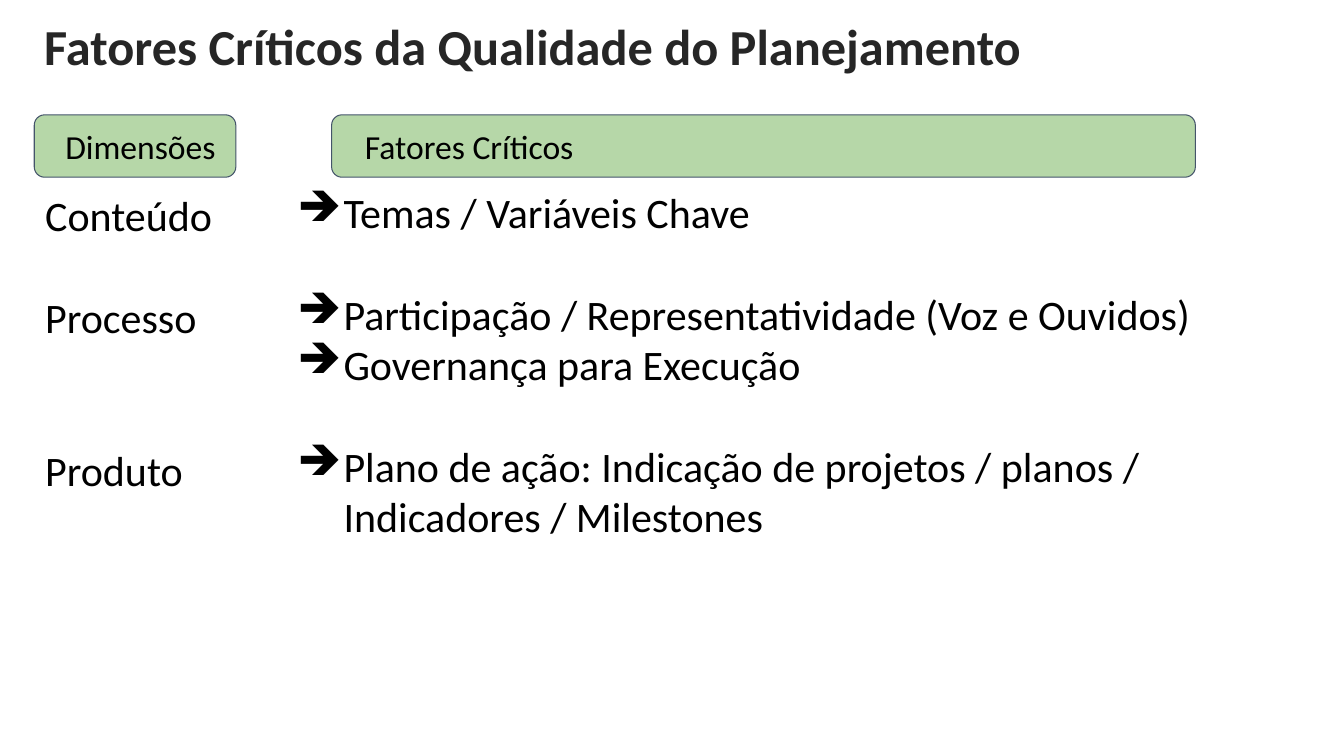
from lxml import etree
from pptx import Presentation
from pptx.dml.color import RGBColor
from pptx.enum import shapes, text
from pptx.oxml import ns
from pptx.util import Pt

COLOURS = {"title": "262626", "text": "000000", "header": "B6D7A8", "outline": "44546A"}
FONT = "Calibri"
BODY_SIZE = 30
BODY_LINE = 36.6  # height of one line of body text

# Each entry: wording, empty lines above it
DIMENSIONS = [("Conteúdo", 0), ("Processo", 1), ("Produto", 2)]
FACTORS = [
    ("Temas / Variáveis Chave", 0),
    ("Participação / Representatividade (Voz e Ouvidos)", 1),
    ("Governança para Execução", 0),
    ("Plano de ação: Indicação de projetos / planos / Indicadores / Milestones", 1),
]


def colour(name):
    return RGBColor.from_string(COLOURS[name])


def style(para, size, colour_name="text", bold=False):
    para.font.name = FONT
    para.font.size = Pt(size)
    para.font.bold = bold
    para.font.color.rgb = colour(colour_name)


def add_arrow_bullet(para):
    props = para._p.get_or_add_pPr()
    props.set("marL", str(Pt(36)))
    props.set("indent", str(-Pt(33)))
    bullet_colour = etree.SubElement(props, ns.qn("a:buClr"))
    etree.SubElement(bullet_colour, ns.qn("a:srgbClr"), val=COLOURS["text"])
    etree.SubElement(props, ns.qn("a:buChar"), char="➔")


def add_text_box(page, left, top, width, height, inset):
    box = page.shapes.add_textbox(Pt(left), Pt(top), Pt(width), Pt(height))
    frame = box.text_frame
    frame.word_wrap = True
    frame.margin_top = frame.margin_bottom = Pt(inset)
    return frame


def add_title(page, wording):
    frame = add_text_box(page, 24.5, 5.8, 812.9, 52.6, 3.6)
    frame.vertical_anchor = text.MSO_ANCHOR.BOTTOM
    para = frame.paragraphs[0]
    para.text = wording
    para.line_spacing = 0.9
    style(para, 36, "title", bold=True)


def add_header(page, wording, left, width, inset):
    box = page.shapes.add_shape(
        shapes.MSO_SHAPE.ROUNDED_RECTANGLE, Pt(left), Pt(82), Pt(width), Pt(44.6))
    box.shadow.inherit = False
    box.fill.solid()
    box.fill.fore_color.rgb = colour("header")
    box.line.color.rgb = colour("outline")
    box.line.width = Pt(0.75)
    frame = box.text_frame
    frame.margin_left = Pt(inset)
    frame.vertical_anchor = text.MSO_ANCHOR.MIDDLE
    para = frame.paragraphs[0]
    para.text = wording
    para.alignment = text.PP_ALIGN.LEFT
    style(para, 24)


def add_column(page, entries, left, top, width, bulleted=False):
    frame = add_text_box(page, left, top, width, 283, 7.2)
    for index, (wording, empty_lines) in enumerate(entries):
        para = frame.add_paragraph() if index else frame.paragraphs[0]
        para.text = wording
        if bulleted:
            add_arrow_bullet(para)
        if empty_lines:
            para.space_before = Pt(empty_lines * BODY_LINE)
        style(para, BODY_SIZE)


def main():
    deck = Presentation()
    deck.slide_width, deck.slide_height = Pt(960), Pt(540)
    page = deck.slides.add_slide(deck.slide_layouts[6])

    add_title(page, "Fatores Críticos da Qualidade do Planejamento")

    # Column headers
    add_header(page, "Dimensões", left=24.5, width=144, inset=20)
    add_header(page, "Fatores Críticos", left=236.9, width=617, inset=21.6)

    # Dimensions and their critical factors
    add_column(page, DIMENSIONS, left=25.2, top=128.2, width=162.7)
    add_column(page, FACTORS, left=202.3, top=126, width=672.5, bulleted=True)

    deck.save("out.pptx")


if __name__ == "__main__":
    main()
